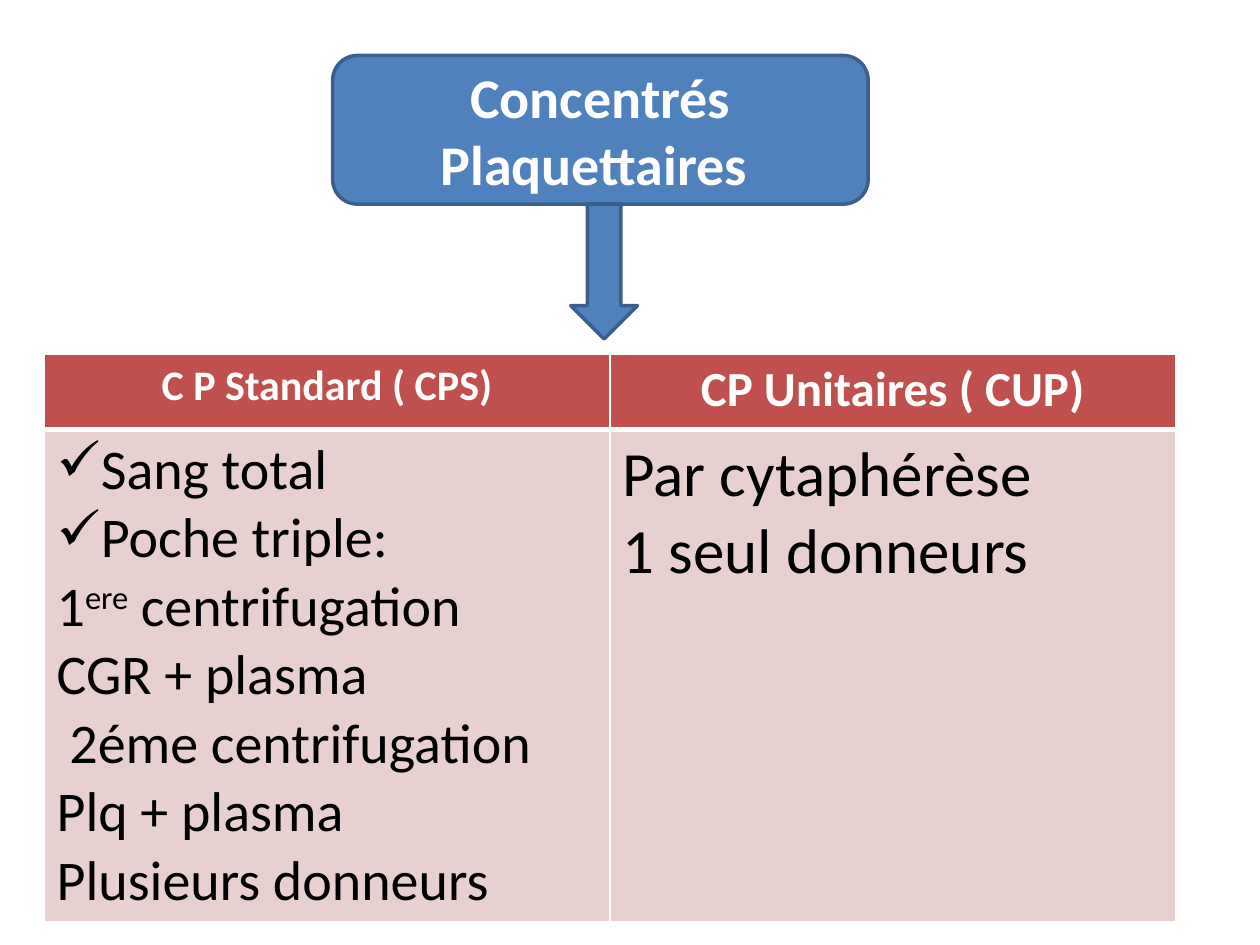
from lxml import etree
from pptx import Presentation
from pptx.dml.color import RGBColor
from pptx.enum.shapes import MSO_SHAPE as Shape
from pptx.enum.text import MSO_ANCHOR as Anchor, PP_ALIGN as Align
from pptx.oxml import parse_xml
from pptx.oxml.ns import nsdecls, qn
from pptx.util import Inches, Pt

FONT = "Calibri"
COLORS = {
    "blue": "4F81BD",
    "outline": "3A5F8C",
    "header": "C0504D",
    "body": "E8D0D0",
    "white": "FFFFFF",
    "black": "000000",
}
CHECK = "✓"

# Each column: header, header size, body size, paragraphs as (bullet, runs)
# where a run is (text, superscript)
COLUMNS = [
    ("C P Standard ( CPS)", 24, 32, [
        (CHECK, [("Sang total", False)]),
        (CHECK, [("Poche triple:", False)]),
        (None, [("1", False), ("ere", True), (" centrifugation", False)]),
        (None, [("CGR + plasma", False)]),
        (None, [(" 2éme centrifugation", False)]),
        (None, [("Plq + plasma", False)]),
        (None, [("Plusieurs donneurs", False)]),
    ]),
    ("CP Unitaires ( CUP)", 28, 36, [
        (None, [("Par cytaphérèse", False)]),
        (None, [("1 seul donneurs", False)]),
    ]),
]


def rgb(name):
    return RGBColor.from_string(COLORS[name])


def style_run(r, size, color, bold=False, superscript=False):
    r.font.name = FONT
    r.font.size = Pt(size)
    r.font.bold = bold
    r.font.color.rgb = rgb(color)
    if superscript:
        r._r.get_or_add_rPr().set("baseline", "30000")


def add_block(slide, kind, left, top, width, height):
    """Blue outlined shape, without shadow."""
    sp = slide.shapes.add_shape(
        kind, Inches(left), Inches(top), Inches(width), Inches(height))
    sp.shadow.inherit = False
    sp.fill.solid()
    sp.fill.fore_color.rgb = rgb("blue")
    sp.line.color.rgb = rgb("outline")
    sp.line.width = Pt(2)
    return sp


def set_title(sp, text, size):
    tf = sp.text_frame
    tf.word_wrap = True
    tf.vertical_anchor = Anchor.MIDDLE
    p = tf.paragraphs[0]
    p.text = text
    p.alignment = Align.CENTER
    style_run(p.runs[0], size, "white", bold=True)


def style_cell(cell, fill, **widths):
    """White borders, widths in points by side, and a plain fill."""
    tcPr = cell._tc.get_or_add_tcPr()
    for side in "LRTB":
        tcPr.append(parse_xml(
            f'<a:ln{side} {nsdecls("a")} w="{Pt(widths.get(side, 1))}">'
            f'<a:solidFill><a:srgbClr val="{COLORS["white"]}"/></a:solidFill>'
            f'</a:ln{side}>'))
    cell.fill.solid()
    cell.fill.fore_color.rgb = rgb(fill)


def fill_header(cell, text, size):
    style_cell(cell, "header", B=3)
    p = cell.text_frame.paragraphs[0]
    p.text = text
    p.alignment = Align.CENTER
    style_run(p.runs[0], size, "white", bold=True)


def fill_body(cell, paragraphs, size):
    style_cell(cell, "body", T=3)
    tf = cell.text_frame
    for i, (bullet, runs) in enumerate(paragraphs):
        p = tf.paragraphs[0] if i == 0 else tf.add_paragraph()
        if bullet:
            pPr = p._p.get_or_add_pPr()
            etree.SubElement(pPr, qn("a:buChar")).set("char", bullet)
        for text, superscript in runs:
            r = p.add_run()
            r.text = text
            style_run(r, size, "black", superscript=superscript)


def add_comparison(slide, left, top, width, row_heights):
    height = sum(row_heights)
    table = slide.shapes.add_table(
        len(row_heights), len(COLUMNS),
        Inches(left), Inches(top), Inches(width), Inches(height)).table
    for row, row_height in zip(table.rows, row_heights):
        row.height = Inches(row_height)
    for i, (header, header_size, body_size, paragraphs) in enumerate(COLUMNS):
        table.columns[i].width = Inches(width / len(COLUMNS))
        fill_header(table.cell(0, i), header, header_size)
        fill_body(table.cell(1, i), paragraphs, body_size)


def main():
    prs = Presentation()
    prs.slide_width, prs.slide_height = Inches(10), Inches(7.5)
    s = prs.slides.add_slide(prs.slide_layouts[6])

    # Title box and the arrow leaving its lower edge
    title_top, title_height = 0.44, 1.18
    title = add_block(s, Shape.ROUNDED_RECTANGLE, 2.64, title_top, 4.25, title_height)
    set_title(title, "Concentrés Plaquettaires ", 32)
    add_block(s, Shape.DOWN_ARROW, 4.53, title_top + title_height, 0.53, 1.07)

    # Comparison of the two kinds of concentrate
    add_comparison(s, 0.35, 2.81, 8.98, [0.6, 3.9])

    prs.save("out.pptx")


if __name__ == "__main__":
    main()
